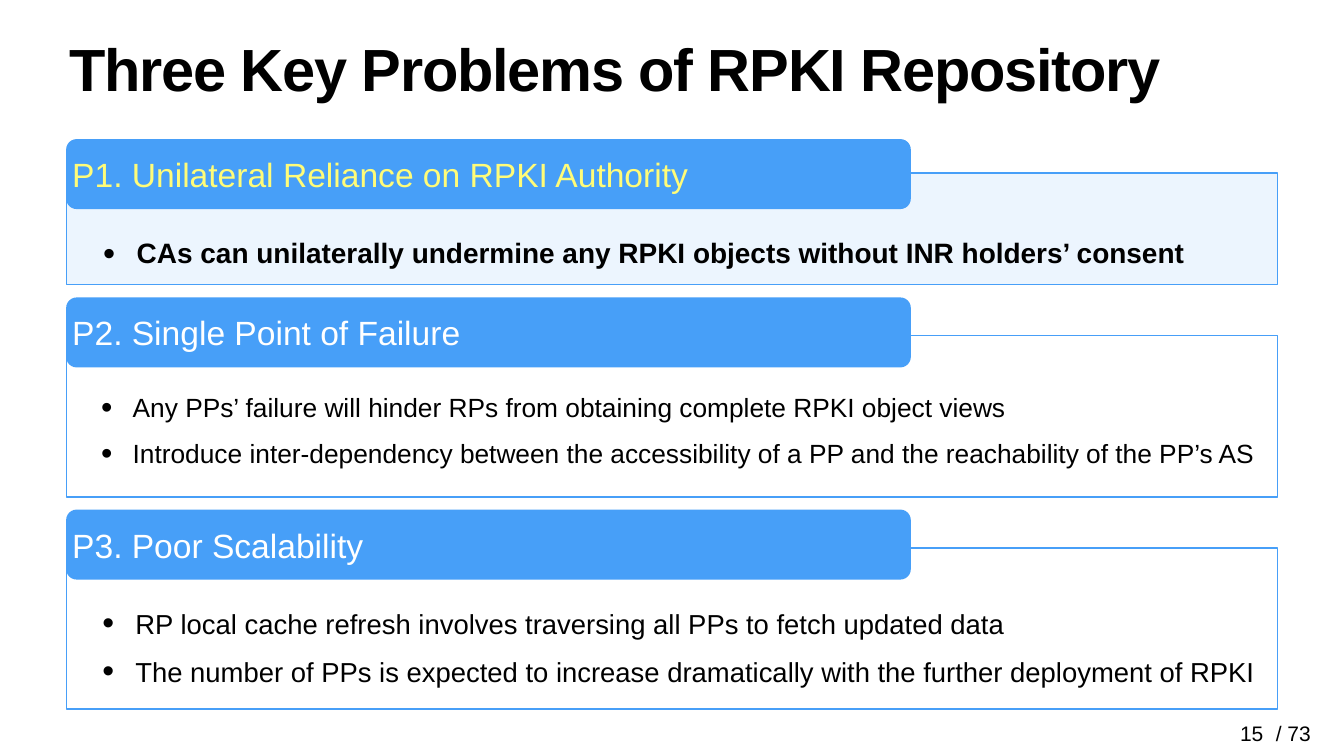
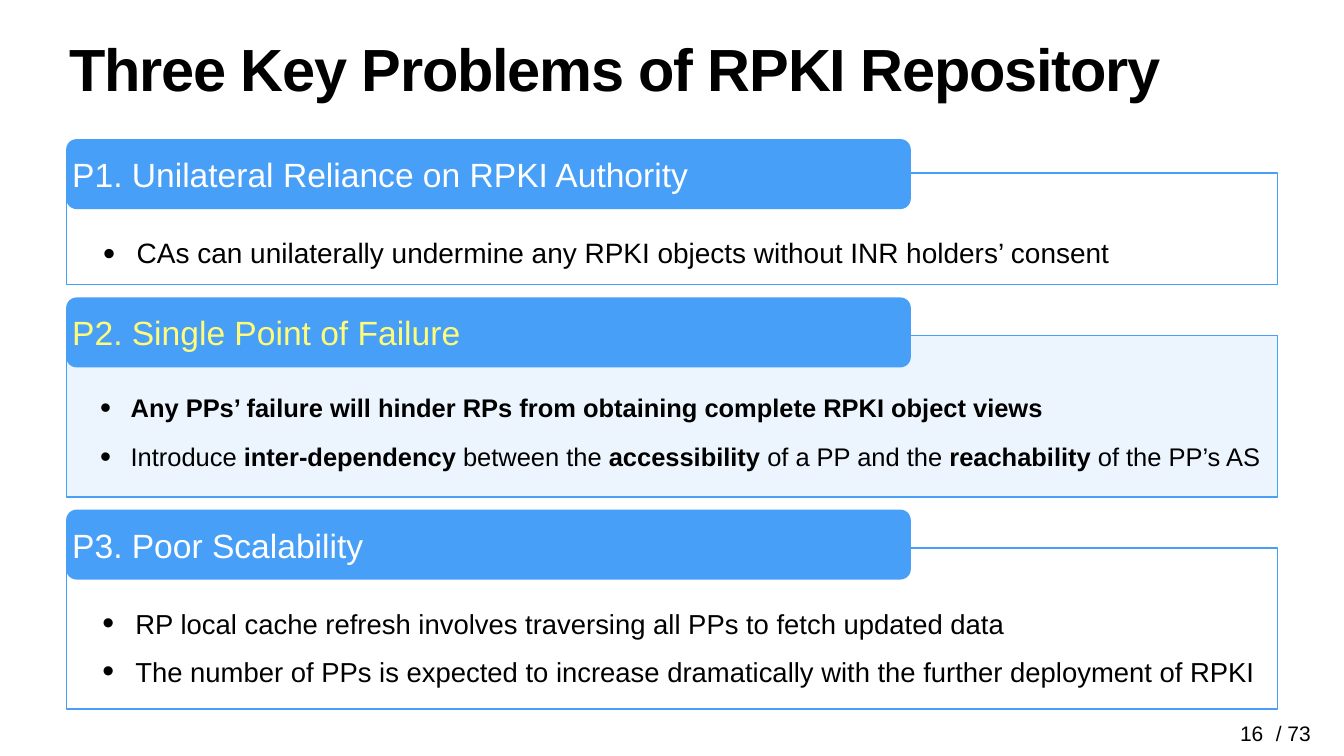
from lxml import etree
from pptx import Presentation
from pptx.dml.color import RGBColor
from pptx.enum import shapes, text
from pptx.oxml import ns
from pptx.util import Pt

COLORS = {"blue": "479FF8", "yellow": "FFFC79", "white": "FFFFFF", "black": "000000"}
FONT = "Arial"
TITLE = "Three Key Problems of RPKI Repository"
LEFT, PANEL_WIDTH, PILL_WIDTH, PILL_HEIGHT = 95, 1730, 1206.7, 100
FIRST_PILL_TOP, PANEL_GAP, INSET = 198.7, 18, 4.3

# Heading, drop from pill to panel, panel height
PROBLEMS = [
    ("P1. Unilateral Reliance on RPKI Authority", 48.2, 160),
    ("P2. Single Point of Failure", 54.7, 230.4),
    ("P3. Poor Scalability", 54.7, 230.4),
]

# Bullets are lists of runs; every second run, starting with the second, is bold
CONSENT = "CAs can unilaterally undermine any RPKI objects without INR holders’ consent"
FAILURE = "Any PPs’ failure will hinder RPs from obtaining complete RPKI object views"
DEPENDENCY = ["Introduce ", "inter-dependency", " between the ", "accessibility",
              " of a PP and the ", "reachability", " of the PP’s AS"]
SCALABILITY = [
    ["RP local cache refresh involves traversing all PPs to fetch updated data"],
    ["The number of PPs is expected to increase dramatically with the further deployment of RPKI"],
]

# Per panel: font size, line spacing, space between bullets, top inset, bullets
SCALABILITY_BODY = (39.2, 0.8, 31, 93.5, SCALABILITY)
SLIDES = [
    {"number": "15", "active": 0, "bodies": [
        (40, 0.9, 30, 95.7, [["", CONSENT]]),
        (37.6, 0.8, 29.5, 88.5, [[FAILURE], ["".join(DEPENDENCY)]]),
        SCALABILITY_BODY]},
    {"number": "16", "active": 1, "bodies": [
        (40, 0.9, 30, 95.7, [[CONSENT]]),
        (36.4, 0.9, 29.5, 86, [["", FAILURE], DEPENDENCY]),
        SCALABILITY_BODY]},
]


def add_run(paragraph, words, size, color="black", bold=False):
    run = paragraph.add_run()
    run.text = words
    run.font.name = FONT
    run.font.size = Pt(size)
    run.font.bold = bold
    run.font.color.rgb = RGBColor.from_string(COLORS[color])
    return run


def prepare_frame(shape, anchor, wrap=True, top=INSET):
    """Set insets, anchor and wrapping; return the frame and its first paragraph."""
    frame = shape.text_frame
    frame.word_wrap = wrap
    frame.vertical_anchor = anchor
    frame.margin_left = frame.margin_right = frame.margin_bottom = Pt(INSET)
    frame.margin_top = Pt(top)
    frame.paragraphs[0].alignment = text.PP_ALIGN.LEFT
    return frame, frame.paragraphs[0]


presentation = Presentation()
presentation.slide_width = Pt(1920)
presentation.slide_height = Pt(1080)

for content in SLIDES:
    slide = presentation.slides.add_slide(presentation.slide_layouts[6])

    title = slide.shapes.add_textbox(Pt(LEFT), Pt(60.5), Pt(PANEL_WIDTH), Pt(162))
    frame, paragraph = prepare_frame(title, text.MSO_ANCHOR.TOP)
    paragraph.line_spacing = 0.8
    run = add_run(paragraph, TITLE, 85, bold=True)
    run.font._element.set("spc", "-170")

    pill_top = FIRST_PILL_TOP
    for index, (heading, drop, panel_height) in enumerate(PROBLEMS):
        active = index == content["active"]
        size, line_spacing, gap, top_inset, bullets = content["bodies"][index]

        panel = slide.shapes.add_shape(
            shapes.MSO_SHAPE.RECTANGLE, Pt(LEFT), Pt(pill_top + drop),
            Pt(PANEL_WIDTH), Pt(panel_height))
        panel.shadow.inherit = False
        panel.line.color.rgb = RGBColor.from_string(COLORS["blue"])
        panel.line.width = Pt(2)
        if active:
            panel.fill.solid()
            panel.fill.fore_color.rgb = RGBColor.from_string(COLORS["blue"])
            fill_color = panel._element.spPr.find(".//" + ns.qn("a:srgbClr"))
            etree.SubElement(fill_color, ns.qn("a:alpha"), val="10000")
        else:
            panel.fill.background()

        frame, paragraph = prepare_frame(panel, text.MSO_ANCHOR.TOP, top=top_inset)
        for bullet_index, runs in enumerate(bullets):
            if bullet_index:
                paragraph = frame.add_paragraph()
                paragraph.alignment = text.PP_ALIGN.LEFT
                paragraph.space_before = Pt(gap)
            paragraph.level = 1
            paragraph.line_spacing = line_spacing
            properties = paragraph._p.get_or_add_pPr()
            properties.set("marL", str(Pt(2.4 * size)))
            properties.set("indent", str(-Pt(1.2 * size)))
            etree.SubElement(properties, ns.qn("a:buSzPct"), val="123000")
            etree.SubElement(properties, ns.qn("a:buFont"), typeface=FONT)
            etree.SubElement(properties, ns.qn("a:buChar"), char="•")
            for run_index, words in enumerate(runs):
                if words:
                    add_run(paragraph, words, size, bold=run_index % 2 == 1)

        pill = slide.shapes.add_shape(
            shapes.MSO_SHAPE.ROUNDED_RECTANGLE, Pt(LEFT - 0.5), Pt(pill_top),
            Pt(PILL_WIDTH), Pt(PILL_HEIGHT))
        pill.adjustments[0] = 0.15
        pill.shadow.inherit = False
        pill.fill.solid()
        pill.fill.fore_color.rgb = RGBColor.from_string(COLORS["blue"])
        pill.line.fill.background()
        frame, paragraph = prepare_frame(pill, text.MSO_ANCHOR.MIDDLE)
        # The rounded corner pushes the text inwards, so the left inset is smaller
        frame.margin_left = Pt(INSET)
        add_run(paragraph, heading, 48, "yellow" if active else "white")

        pill_top += drop + panel_height + PANEL_GAP

    for words, left, width in [(content["number"], 1766.9, 42.5), ("/ 73", 1817.3, 60.5)]:
        footer = slide.shapes.add_textbox(Pt(left), Pt(1026.7), Pt(width), Pt(43.2))
        frame, paragraph = prepare_frame(footer, text.MSO_ANCHOR.BOTTOM, wrap=False)
        paragraph.alignment = text.PP_ALIGN.CENTER
        add_run(paragraph, words, 30)

presentation.save("out.pptx")
